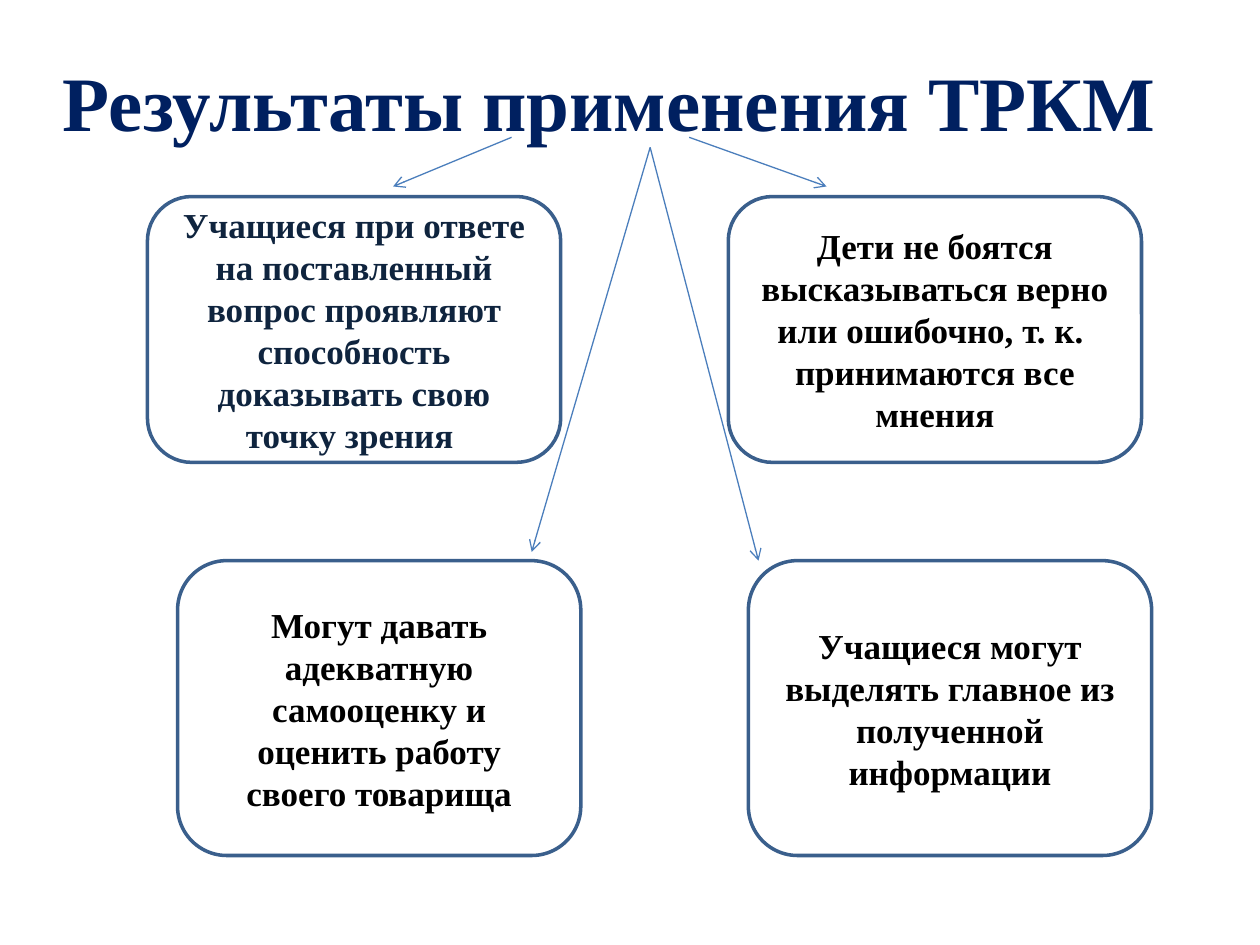
from lxml import etree
from pptx import Presentation, util as u
from pptx.dml.color import RGBColor
from pptx.enum import shapes, text
from pptx.oxml.ns import qn

COLORS = {
    "title": "002060",
    "accent": "0F243E",
    "body": "000000",
    "card": "FFFFFF",
    "border": "3A5F8C",
    "arrow": "4B7EBC",
}


class SlideBuilder:
    font_name = "Times New Roman"

    def __init__(self, slide):
        self.slide = slide

    def color(self, key):
        return RGBColor.from_string(COLORS[key])

    def add_words(self, frame, words, size, color, **frame_format):
        frame_format = {"word_wrap": True, **frame_format}
        for name, value in frame_format.items():
            setattr(frame, name, value)
        paragraph = frame.paragraphs[0]
        paragraph.alignment = text.PP_ALIGN.CENTER
        run = paragraph.add_run()
        run.text = words
        font_format = {"name": self.font_name, "size": u.Pt(size), "bold": True}
        for name, value in font_format.items():
            setattr(run.font, name, value)
        run.font.color.rgb = self.color(color)

    def title(self, words, *place):
        box = self.slide.shapes.add_textbox(*map(u.Inches, place))
        self.add_words(box.text_frame, words, 44, "title",
                       margin_top=u.Inches(0.12), margin_bottom=u.Inches(0.04))

    def card(self, words, *place, color="body"):
        card = self.slide.shapes.add_shape(
            shapes.MSO_SHAPE.ROUNDED_RECTANGLE, *map(u.Inches, place))
        card.shadow.inherit = False
        card.fill.solid()
        card.fill.fore_color.rgb = self.color("card")
        card.line.color.rgb = self.color("border")
        card.line.width = u.Pt(2)
        self.add_words(card.text_frame, words, 20, color,
                       vertical_anchor=text.MSO_ANCHOR.MIDDLE)

    def arrow(self, start, end):
        arrow = self.slide.shapes.add_connector(
            shapes.MSO_CONNECTOR.STRAIGHT, *map(u.Inches, (*start, *end)))
        arrow.line.color.rgb = self.color("arrow")
        arrow.line.width = u.Pt(0.75)
        properties = arrow._element.spPr
        etree.SubElement(properties.find(qn("a:ln")), qn("a:tailEnd"), type="arrow")
        etree.SubElement(properties, qn("a:effectLst"))


def main():
    deck = Presentation()
    deck.slide_width, deck.slide_height = u.Inches(10), u.Inches(7.5)
    builder = SlideBuilder(deck.slides.add_slide(deck.slide_layouts[6]))

    # Heading
    builder.title("Результаты применения ТРКМ", 0.23, 0.31, 9.22, 0.84)

    # Upper results
    upper_top, upper_size = 1.56, (3.28, 2.11)
    builder.card("Учащиеся при ответе на поставленный вопрос проявляют "
                 "способность доказывать свою точку зрения ",
                 1.17, upper_top, *upper_size, color="accent")
    builder.card("Дети не боятся высказываться верно или ошибочно, т. к.  "
                 "принимаются все мнения", 5.78, upper_top, *upper_size)

    # Lower results
    lower_top, lower_size = 4.45, (3.2, 2.34)
    builder.card("Могут давать адекватную самооценку и оценить работу "
                 "своего товарища", 1.41, lower_top, *lower_size)
    builder.card("Учащиеся могут выделять главное из полученной информации",
                 5.94, lower_top, *lower_size)

    # Arrows from the heading to the results
    heading_center = (5.16, 1.17)
    for start, end in (
        ((5.47, 1.09), (6.56, 1.48)),
        ((4.06, 1.09), (3.12, 1.48)),
        (heading_center, (4.22, 4.38)),
        (heading_center, (6.02, lower_top)),
    ):
        builder.arrow(start, end)

    deck.save("out.pptx")


if __name__ == "__main__":
    main()
